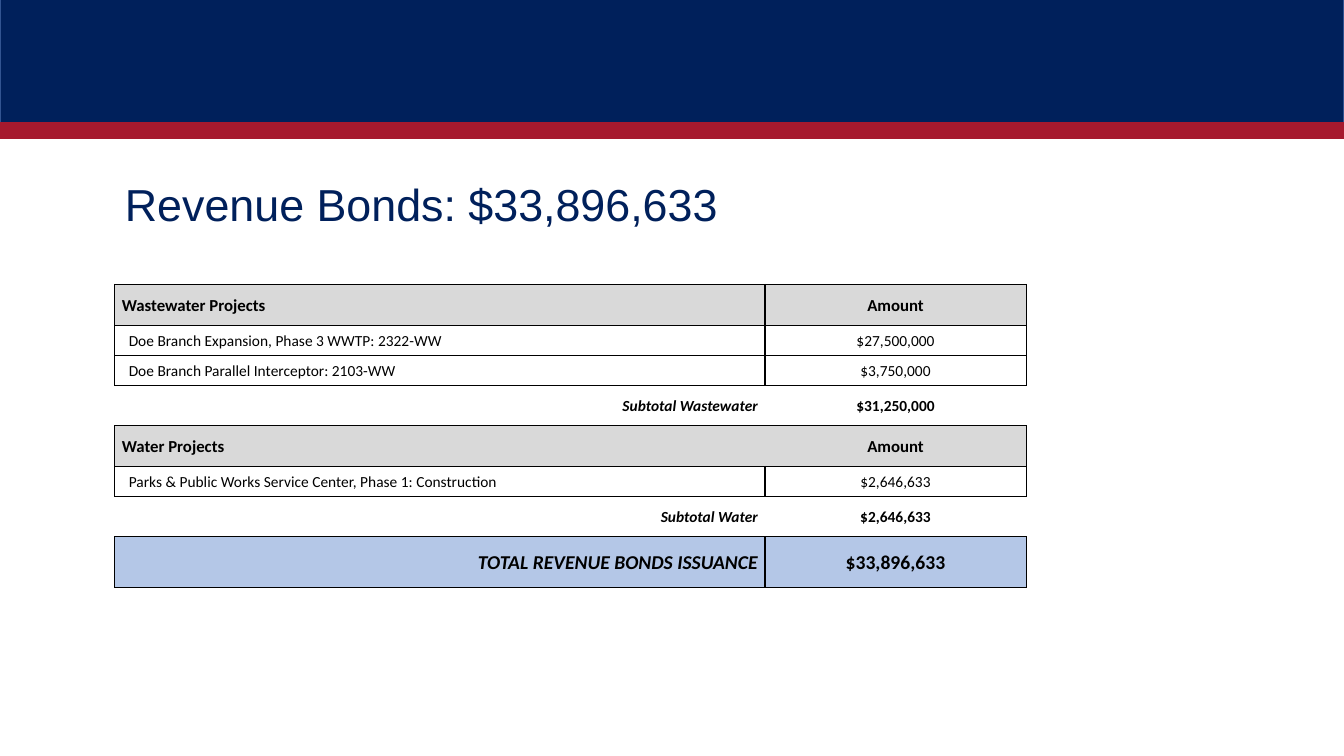
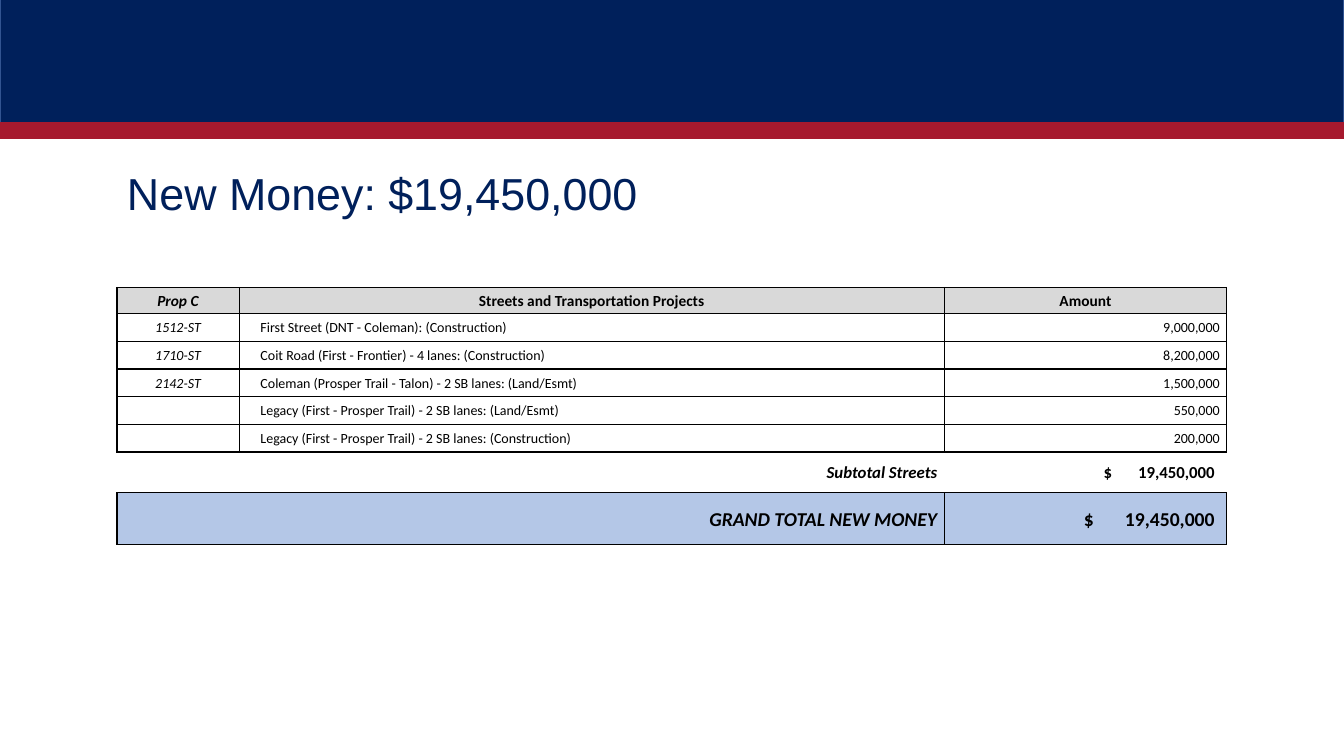
from dataclasses import dataclass

from lxml.etree import SubElement
from pptx import Presentation
from pptx.dml.color import RGBColor
from pptx.enum.shapes import MSO_SHAPE
from pptx.enum.text import MSO_ANCHOR, MSO_AUTO_SIZE, PP_ALIGN
from pptx.oxml.ns import qn
from pptx.slide import Slide, SlideLayout
from pptx.table import _Cell
from pptx.text.text import Font, _Paragraph
from pptx.util import Pt


# Theme
@dataclass(frozen=True)
class Theme:
    navy: str = "00205B"
    navy_edge: str = "325491"
    red: str = "A6192E"
    black: str = "000000"
    white: str = "FFFFFF"
    grey: str = "D9D9D9"
    blue: str = "B4C7E7"
    title_font: str = "Arial"
    table_font: str = "Calibri"
    title: float = 32
    total: float = 14
    heading: float = 12
    body: float = 11
    small: float = 10


THEME = Theme()
SLIDE_WIDTH, SLIDE_HEIGHT = 960, 540
LEFT, CENTER, RIGHT = PP_ALIGN.LEFT, PP_ALIGN.CENTER, PP_ALIGN.RIGHT
ALL_EDGES = "LRTB"
TITLE_HEIGHT = 46
CELL_INSET = 5


# Repeated elements
@dataclass(frozen=True)
class Band:
    top: float
    height: float
    color: str
    edge: str | None = None


@dataclass(frozen=True)
class CellSpec:
    text: str
    size: float = THEME.body
    align: PP_ALIGN = LEFT
    bold: bool = False
    italic: bool = False
    fill: str = THEME.white
    edges: str = ALL_EDGES
    indent: float = 0
    tabs: tuple[tuple[float, str], ...] = ()
    columns: int = 1


@dataclass(frozen=True)
class RowSpec:
    height: float
    cells: tuple[CellSpec, ...]


@dataclass(frozen=True)
class TablePage:
    title: str
    title_box: tuple[float, float, float]
    table_at: tuple[float, float]
    columns: tuple[float, ...]
    rows: tuple[RowSpec, ...]


BANDS = (
    Band(-0.7, 88.5, THEME.navy, THEME.navy_edge),
    Band(87.3, 11.9, THEME.red),
)


# Row kinds of the revenue bond table
def bond_header(name: str, divided: bool = True) -> RowSpec:
    look = {"size": THEME.heading, "bold": True, "fill": THEME.grey}
    left_edges, right_edges = (ALL_EDGES, ALL_EDGES) if divided else ("LTB", "RTB")
    return RowSpec(29.1, (CellSpec(name, edges=left_edges, **look),
                          CellSpec("Amount", align=CENTER, edges=right_edges, **look)))


def bond_project(name: str, amount: str) -> RowSpec:
    return RowSpec(21.6, (CellSpec(name, indent=5), CellSpec(amount, align=CENTER)))


def bond_sum(name: str, amount: str, height: float = 28.6, **look) -> RowSpec:
    return RowSpec(height, (CellSpec(name, align=RIGHT, bold=True, italic=True, **look),
                            CellSpec(amount, align=CENTER, bold=True, **look)))


# Row kinds of the new money table
def street_spacer() -> RowSpec:
    return RowSpec(13.8, (CellSpec("", THEME.small, edges="B", columns=3),))


def street_header(*names: str) -> RowSpec:
    return RowSpec(18.7, tuple(
        CellSpec(name, align=CENTER, bold=True, italic=index == 0, fill=THEME.grey)
        for index, name in enumerate(names)))


def street_project(code: str, name: str, amount: str) -> RowSpec:
    return RowSpec(19.8, (CellSpec(code, THEME.small, CENTER, italic=True),
                          CellSpec(name, THEME.small, indent=10.3),
                          CellSpec(amount, THEME.small, RIGHT)))


def street_sum(name: str, amount: str, height: float, dollar_stop: float, **look) -> RowSpec:
    stops = ((dollar_stop, "l"), (188.2, "r"))
    return RowSpec(height, (
        CellSpec(name, align=RIGHT, bold=True, italic=True, columns=2, **look),
        CellSpec(f"\t$\t{amount}", bold=True, tabs=stops, **look)))


SUBTOTAL = {"edges": "TB"}
TOTAL = {"size": THEME.total, "fill": THEME.blue}

PAGES = (
    TablePage(
        "Revenue Bonds: $33,896,633", (82, 122.4, 442), (82, 203.2), (464.4, 186.6),
        (
            bond_header("Wastewater Projects"),
            bond_project("Doe Branch Expansion, Phase 3 WWTP: 2322-WW", "$27,500,000"),
            bond_project("Doe Branch Parallel Interceptor: 2103-WW", "$3,750,000"),
            bond_sum("Subtotal Wastewater", "$31,250,000", **SUBTOTAL),
            bond_header("Water Projects", divided=False),
            bond_project("Parks & Public Works Service Center, Phase 1: Construction",
                         "$2,646,633"),
            bond_sum("Subtotal Water", "$2,646,633", **SUBTOTAL),
            bond_sum("TOTAL REVENUE BONDS ISSUANCE", "$33,896,633", 36.2, **TOTAL),
        ),
    ),
    TablePage(
        "New Money: $19,450,000", (83.5, 114.8, 384), (83.5, 191.5), (87.3, 503.8, 201.6),
        (
            street_spacer(),
            street_header("Prop C", "Streets and Transportation Projects", "Amount"),
            street_project("1512-ST", "First Street (DNT - Coleman): (Construction)",
                           "9,000,000"),
            street_project("1710-ST", "Coit Road (First - Frontier) - 4 lanes: (Construction)",
                           "8,200,000"),
            street_project("2142-ST",
                           "Coleman (Prosper Trail - Talon) - 2 SB lanes: (Land/Esmt)",
                           "1,500,000"),
            street_project("", "Legacy (First - Prosper Trail) - 2 SB lanes: (Land/Esmt)",
                           "550,000"),
            street_project("", "Legacy (First - Prosper Trail) - 2 SB lanes: (Construction)",
                           "200,000"),
            street_sum("Subtotal Streets", "19,450,000", 29, 108.7,
                       size=THEME.heading, **SUBTOTAL),
            street_sum("GRAND TOTAL NEW MONEY", "19,450,000", 37.3, 94.7, **TOTAL),
        ),
    ),
)


# Formatting
def format_font(font: Font, color: str, **values) -> None:
    for name, value in values.items():
        setattr(font, name, value)
    font.color.rgb = RGBColor.from_string(color)


def set_edges(cell: _Cell, edges: str) -> None:
    properties = cell._tc.get_or_add_tcPr()
    for side in ALL_EDGES:
        line = SubElement(properties, qn(f"a:ln{side}"), w=str(Pt(1)))
        if side in edges:
            solid = SubElement(line, qn("a:solidFill"))
            SubElement(solid, qn("a:srgbClr"), val=THEME.black)
        else:
            SubElement(line, qn("a:noFill"))


def set_indent_and_tabs(para: _Paragraph, spec: CellSpec) -> None:
    properties = para._p.get_or_add_pPr()
    if spec.indent:
        properties.set("marL", str(Pt(spec.indent)))
    if spec.tabs:
        tab_list = SubElement(properties, qn("a:tabLst"))
        for position, align in spec.tabs:
            SubElement(tab_list, qn("a:tab"), pos=str(Pt(position)), algn=align)


def fill_cell(cell: _Cell, spec: CellSpec) -> None:
    set_edges(cell, spec.edges)
    cell.fill.solid()
    cell.fill.fore_color.rgb = RGBColor.from_string(spec.fill)
    margins = {"margin_left": CELL_INSET, "margin_right": CELL_INSET,
               "margin_top": 0, "margin_bottom": 0}
    for name, value in margins.items():
        setattr(cell, name, Pt(value))
    cell.vertical_anchor = MSO_ANCHOR.MIDDLE

    para = cell.text_frame.paragraphs[0]
    para.alignment = spec.align
    para.line_spacing = 1.07
    set_indent_and_tabs(para, spec)
    if spec.text:
        span = para.add_run()
        span.text = spec.text
        format_font(span.font, THEME.black, name=THEME.table_font, size=Pt(spec.size),
                    bold=spec.bold, italic=spec.italic)
    else:
        # Keeps an empty cell from stretching its row
        SubElement(para._p, qn("a:endParaRPr"), sz=str(int(spec.size * 100)))


# Parts of a page
def move_bands_to_layout(page: Slide, layout: SlideLayout) -> None:
    for index, band in enumerate(BANDS):
        box = page.shapes.add_shape(MSO_SHAPE.RECTANGLE, 0, Pt(band.top),
                                    Pt(SLIDE_WIDTH), Pt(band.height))
        box.shadow.inherit = False
        box.fill.solid()
        box.fill.fore_color.rgb = RGBColor.from_string(band.color)
        if band.edge:
            box.line.color.rgb = RGBColor.from_string(band.edge)
            box.line.width = Pt(1)
        else:
            box.line.fill.background()
        layout.shapes.element.insert(2 + index, box.element)


def add_title(page: Slide, spec: TablePage) -> None:
    box = page.shapes.title
    left, top, width = spec.title_box
    box.left, box.top, box.width, box.height = map(Pt, (left, top, width, TITLE_HEIGHT))
    frame = box.text_frame
    frame.text = spec.title
    settings = {"word_wrap": True, "auto_size": MSO_AUTO_SIZE.NONE,
                "vertical_anchor": MSO_ANCHOR.TOP}
    for name, value in settings.items():
        setattr(frame, name, value)
    para = frame.paragraphs[0]
    para.alignment = LEFT
    format_font(para.runs[0].font, THEME.navy, name=THEME.title_font,
                size=Pt(THEME.title), bold=False)


def add_project_table(page: Slide, spec: TablePage) -> None:
    left, top = spec.table_at
    height = sum(row.height for row in spec.rows)
    table = page.shapes.add_table(len(spec.rows), len(spec.columns), Pt(left), Pt(top),
                                  Pt(sum(spec.columns)), Pt(height)).table
    table.first_row = table.horz_banding = False
    for column, width in zip(table.columns, spec.columns):
        column.width = Pt(width)
    for row_index, row in enumerate(spec.rows):
        table.rows[row_index].height = Pt(row.height)
        column_index = 0
        for cell_spec in row.cells:
            cell = table.cell(row_index, column_index)
            column_index += cell_spec.columns
            if cell_spec.columns > 1:
                cell.merge(table.cell(row_index, column_index - 1))
            fill_cell(cell, cell_spec)


def main() -> None:
    deck = Presentation()
    deck.slide_width, deck.slide_height = Pt(SLIDE_WIDTH), Pt(SLIDE_HEIGHT)
    layout = deck.slide_layouts.get_by_name("Title Only")
    for index, spec in enumerate(PAGES):
        page = deck.slides.add_slide(layout)
        if index == 0:
            move_bands_to_layout(page, layout)
        add_title(page, spec)
        add_project_table(page, spec)
    deck.save("out.pptx")


if __name__ == "__main__":
    main()
